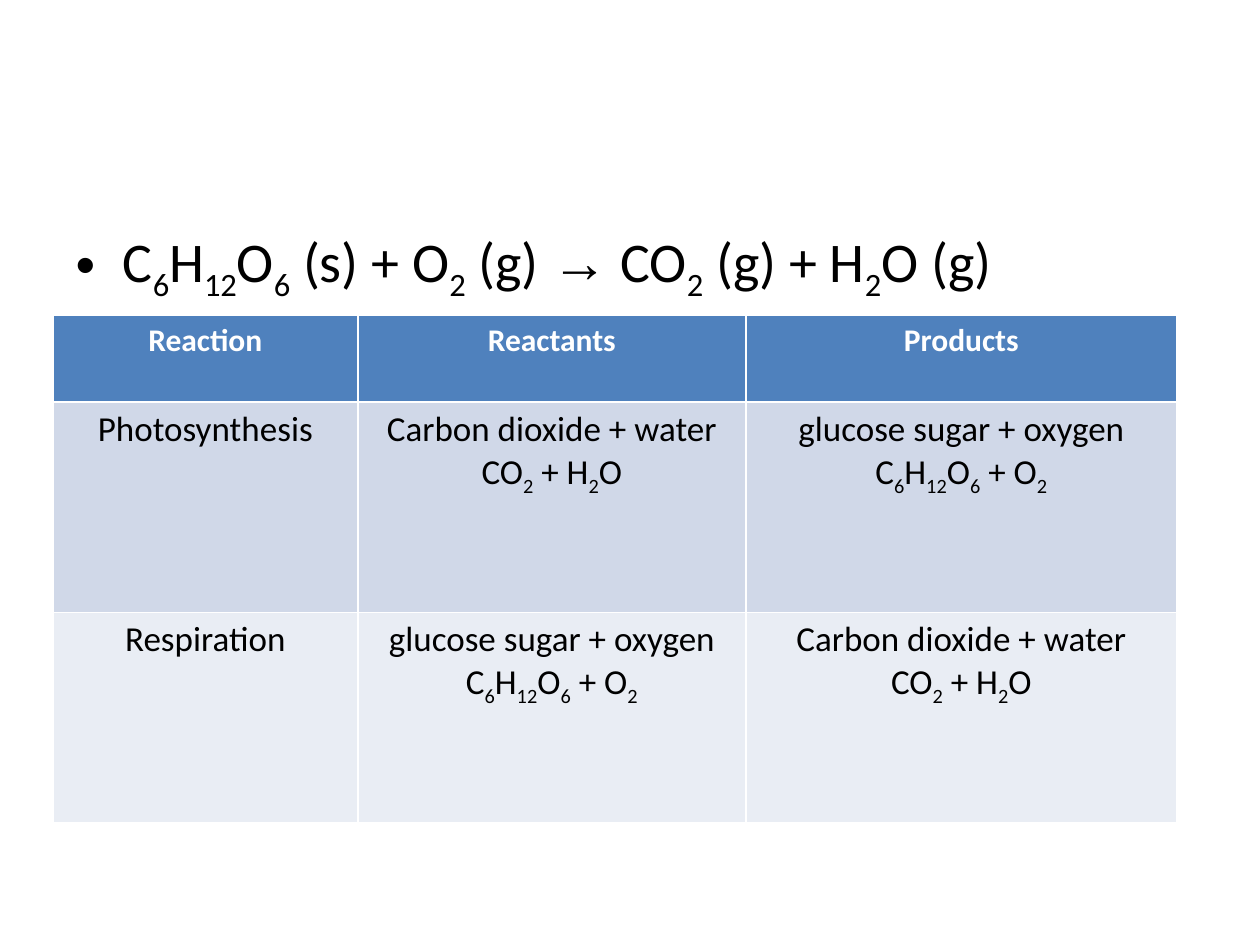
from itertools import groupby

from pptx import Presentation
from pptx.dml.color import RGBColor
from pptx.enum import text
from pptx.util import Inches, Pt

COLORS = {"header": "4F81BD", "odd": "D0D8E8", "even": "E9EDF4",
          "white": "FFFFFF", "black": "000000"}
GLUCOSE_SIDE = ("glucose sugar + oxygen", "C6H12O6 + O2")
CARBON_SIDE = ("Carbon dioxide + water", "CO2 + H2O")
ROWS = [
    (("Reaction",), ("Reactants",), ("Products",)),
    (("Photosynthesis",), CARBON_SIDE, GLUCOSE_SIDE),
    (("Respiration",), GLUCOSE_SIDE, CARBON_SIDE),
]
ROW_FILLS = ["header", "odd", "even"]
COL_WIDTHS = [2.42, 3.08, 3.42]
ROW_HEIGHTS = [0.69, 1.67, 1.67]


def run_kind(char):
    return "subscript" if char.isdigit() else "arrow" if char == "→" else "plain"


def write_formula(p, formula, size, color, bold=False):
    p.font.size = Pt(size)
    p.font.bold = bold
    p.font.color.rgb = RGBColor.from_string(COLORS[color])
    for kind, chars in groupby(formula, run_kind):
        r = p.add_run()
        r.text = "".join(chars)
        r.font.name = "Arial" if kind == "arrow" else "Calibri"
        r.font.size = Pt(size)
        if kind == "subscript":
            r._r.get_or_add_rPr().set("baseline", "-25000")


def place_equation(body, left, top, width, height):
    body.left, body.top = Inches(left), Inches(top)
    body.width, body.height = Inches(width), Inches(height)
    write_formula(body.text_frame.paragraphs[0],
                  "C6H12O6 (s) + O2 (g) → CO2 (g) + H2O (g)", 32, "black")


def fill_cell(cell, lines, fill, is_header):
    cell.fill.solid()
    cell.fill.fore_color.rgb = RGBColor.from_string(COLORS[fill])
    tf = cell.text_frame
    for i, line in enumerate(lines):
        p = tf.add_paragraph() if i else tf.paragraphs[0]
        p.alignment = text.PP_ALIGN.CENTER
        write_formula(p, line, 18 if is_header else 20,
                      "white" if is_header else "black", is_header)


def place_reactions(s, left, top, width, height):
    table = s.shapes.add_table(len(ROWS), len(COL_WIDTHS), Inches(left), Inches(top),
                               Inches(width), Inches(height)).table
    for column, share in zip(table.columns, COL_WIDTHS):
        column.width = Inches(width * share / sum(COL_WIDTHS))
    for row, share in zip(table.rows, ROW_HEIGHTS):
        row.height = Inches(height * share / sum(ROW_HEIGHTS))
    for i, (row, fill) in enumerate(zip(ROWS, ROW_FILLS)):
        for j, lines in enumerate(row):
            fill_cell(table.cell(i, j), lines, fill, i == 0)


def main():
    prs = Presentation()
    prs.slide_width, prs.slide_height = Inches(10), Inches(7.5)
    s = prs.slides.add_slide(prs.slide_layouts[1])
    title = s.shapes.title.element
    title.getparent().remove(title)
    place_equation(s.placeholders[1], 0.5, 1.75, 9, 4.95)
    place_reactions(s, 0.42, 2.5, 8.92, 4.03)
    prs.save("out.pptx")


if __name__ == "__main__":
    main()
